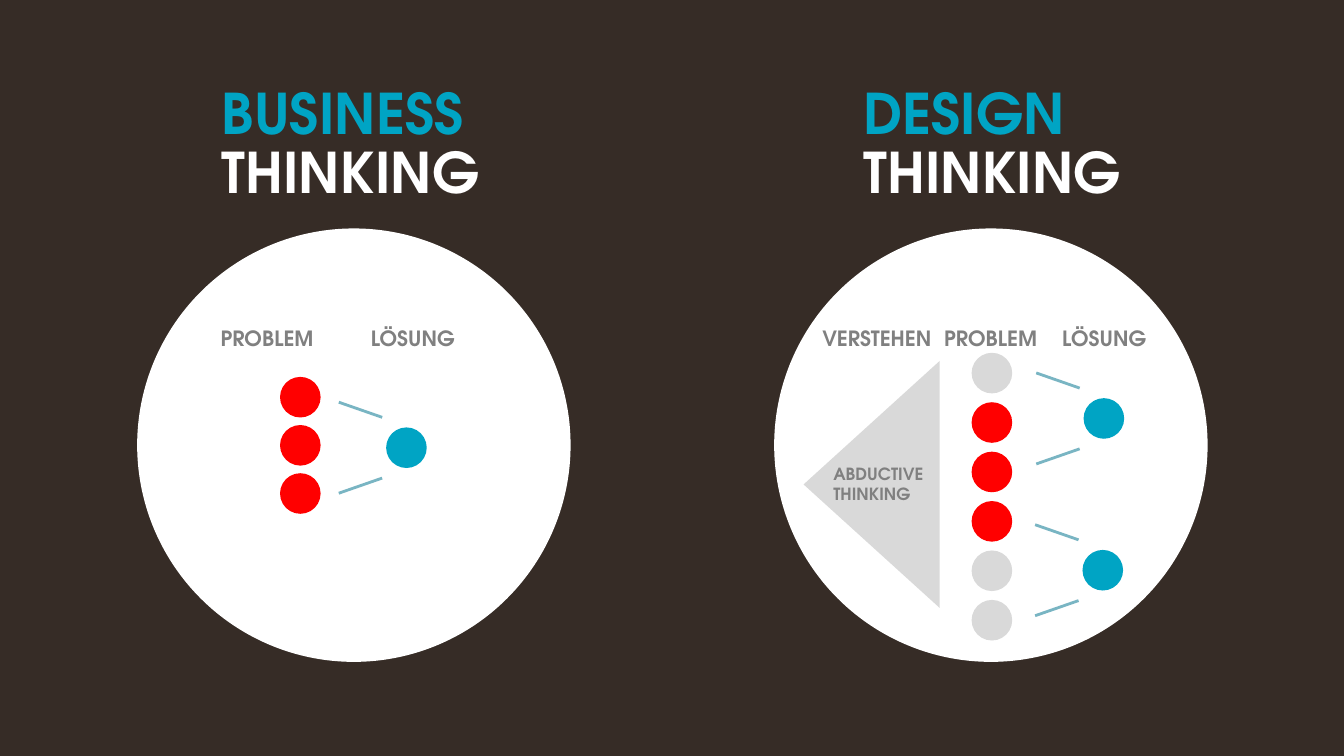
from dataclasses import dataclass

from lxml.etree import SubElement
from pptx import Presentation
from pptx.dml.color import RGBColor
from pptx.enum.shapes import MSO_CONNECTOR, MSO_SHAPE
from pptx.enum.text import MSO_ANCHOR, MSO_AUTO_SIZE, PP_ALIGN
from pptx.oxml.ns import qn
from pptx.util import Pt


@dataclass(frozen=True)
class Theme:
    font: str = "TeX Gyre Adventor"
    background: str = "362C26"
    white: str = "FFFFFF"
    accent: str = "00A4C4"
    problem: str = "FF0000"
    neutral: str = "D9D9D9"
    line: str = "79B5C3"
    label: str = "808080"
    heading_size: float = 40
    label_size: float = 15
    note_size: float = 12
    line_spacing: float = 42
    line_width: float = 2
    dot: float = 29


class SlideBuilder:
    def __init__(self, slide, theme):
        self.slide = slide
        self.theme = theme
        fill = slide.background.fill
        fill.solid()
        fill.fore_color.rgb = RGBColor.from_string(theme.background)

    def shape(self, kind, left, top, width, height, color, rotation=0):
        shape = self.slide.shapes.add_shape(kind, Pt(left), Pt(top), Pt(width), Pt(height))
        shape.shadow.inherit = False
        shape.fill.solid()
        shape.fill.fore_color.rgb = RGBColor.from_string(color)
        shape.line.fill.background()
        shape.rotation = rotation

    def circle(self, left, top, diameter, color):
        self.shape(MSO_SHAPE.OVAL, left, top, diameter, diameter, color)

    def dot_column(self, left, top, step, colors):
        for index, color in enumerate(colors):
            self.circle(left, top + index * step, self.theme.dot, color)

    def line(self, start_x, start_y, end_x, end_y):
        connector = self.slide.shapes.add_connector(
            MSO_CONNECTOR.STRAIGHT, Pt(start_x), Pt(start_y), Pt(end_x), Pt(end_y))
        connector.line.color.rgb = RGBColor.from_string(self.theme.line)
        connector.line.width = Pt(self.theme.line_width)
        SubElement(connector._element.spPr, qn("a:effectLst"))

    def funnel(self, left, top):
        self.line(left, top, left + 31, top + 10.8)
        self.line(left, top + 65, left + 31, top + 54.2)
        self.circle(left + 33.8, top + 18, self.theme.dot, self.theme.accent)

    def format_run(self, run, size, color):
        run.font.name = self.theme.font
        run.font.size = Pt(size)
        run.font.bold = True
        run.font.color.rgb = RGBColor.from_string(color)

    def prepare_frame(self, shape):
        frame = shape.text_frame
        frame.word_wrap = True
        frame.auto_size = MSO_AUTO_SIZE.SHAPE_TO_FIT_TEXT
        frame.vertical_anchor = MSO_ANCHOR.TOP
        return frame

    def heading(self, shape, left, first, second):
        shape.left, shape.top, shape.width, shape.height = Pt(left), Pt(58.3), Pt(202.3), Pt(92.2)
        paragraph = self.prepare_frame(shape).paragraphs[0]
        paragraph.text = first + " "
        paragraph.add_run().text = second
        paragraph.alignment = PP_ALIGN.LEFT
        paragraph.line_spacing = Pt(self.theme.line_spacing)
        for run, color in zip(paragraph.runs, (self.theme.accent, self.theme.white)):
            self.format_run(run, self.theme.heading_size, color)

    def text_box(self, left, top, width, height):
        return self.slide.shapes.add_textbox(Pt(left), Pt(top), Pt(width), Pt(height))

    def text(self, text, left, top, width, height, size, spacing=None):
        frame = self.prepare_frame(self.text_box(left, top, width, height))
        frame.text = text
        for paragraph in frame.paragraphs:
            if spacing:
                paragraph.line_spacing = Pt(spacing)
            for run in paragraph.runs:
                self.format_run(run, size, self.theme.label)

    def label(self, text, left, width=100):
        self.text(text, left, 205.2, width, 40.3, self.theme.label_size, self.theme.line_spacing)


def main():
    theme = Theme()
    presentation = Presentation()
    presentation.slide_width, presentation.slide_height = Pt(960), Pt(540)
    slide = presentation.slides.add_slide(presentation.slide_layouts[5])
    builder = SlideBuilder(slide, theme)

    for circle_left in (98, 553):
        builder.circle(circle_left, 163.2, 309.6, theme.white)

    builder.heading(slide.shapes.title, 151.2, "BUSINESS", "THINKING")
    builder.heading(builder.text_box(609.8, 58.3, 202.3, 92.2), 609.8, "DESIGN", "THINKING")

    builder.shape(MSO_SHAPE.ISOSCELES_TRIANGLE, 534.4, 297.4, 176.4, 97.2, theme.neutral, 270)

    builder.dot_column(200, 269.2, 34.4, [theme.problem] * 3)
    builder.dot_column(694, 252, 35.3,
                       [theme.neutral] + [theme.problem] * 3 + [theme.neutral] * 2)

    for funnel_left, funnel_top in ((242, 287.3), (740.2, 266.4), (739.4, 374.8)):
        builder.funnel(funnel_left, funnel_top)

    for text, left in (("PROBLEM", 150.5), ("LÖSUNG", 257.8),
                       ("PROBLEM", 667.4), ("LÖSUNG", 751.7)):
        builder.label(text, left)
    builder.label("VERSTEHEN", 580.3, 117.4)
    builder.text("ABDUCTIVE\nTHINKING", 588.2, 327.6, 117.4, 36, theme.note_size)

    presentation.save("out.pptx")


if __name__ == "__main__":
    main()
